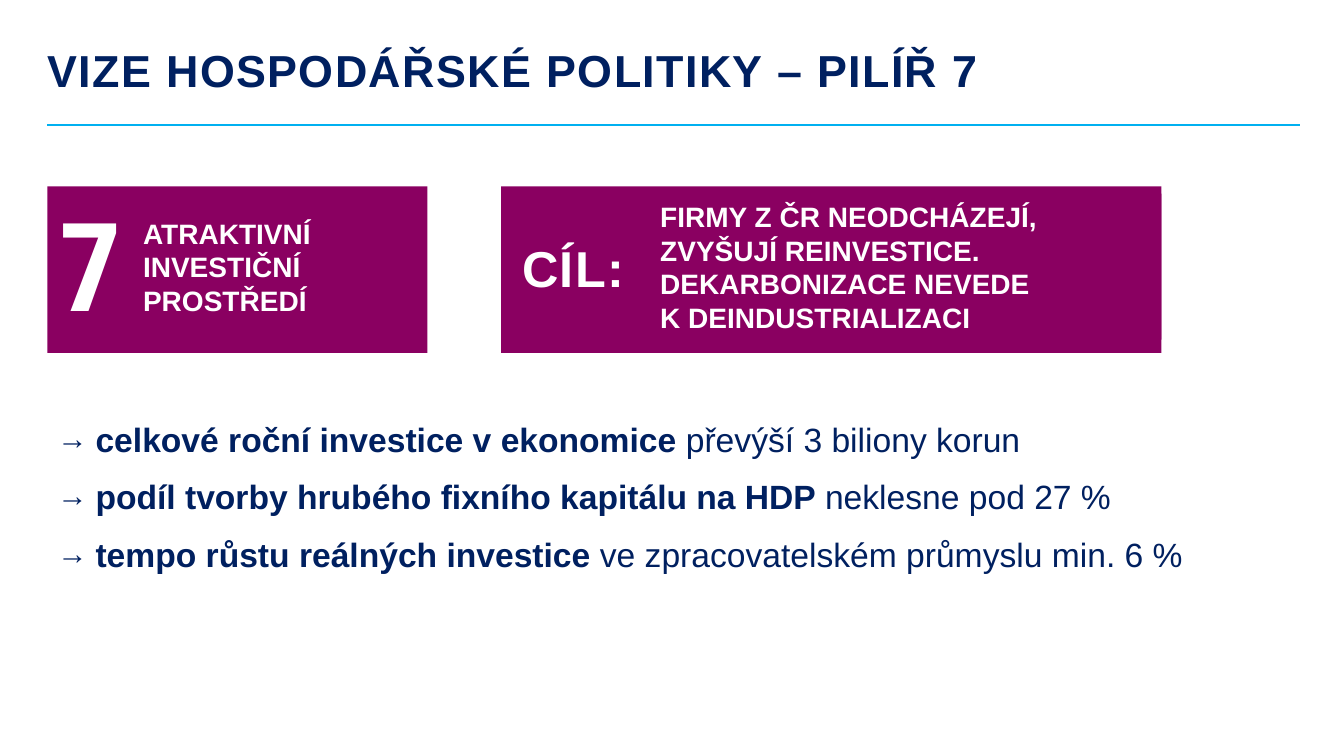
from dataclasses import dataclass
from typing import NamedTuple

from lxml.etree import SubElement
from pptx import Presentation
from pptx.dml.color import RGBColor
from pptx.enum.shapes import MSO_CONNECTOR, MSO_SHAPE
from pptx.enum.text import MSO_ANCHOR, PP_ALIGN
from pptx.oxml.ns import qn
from pptx.util import Pt

PX = 9144  # 100 px to the inch


@dataclass(frozen=True)
class Theme:
    navy: RGBColor = RGBColor(0x00, 0x20, 0x60)
    sky: RGBColor = RGBColor(0x00, 0xB0, 0xF0)
    plum: RGBColor = RGBColor(0x8A, 0x00, 0x61)
    white: RGBColor = RGBColor(0xFF, 0xFF, 0xFF)
    body_font: str = "Arial"
    number_font: str = "Roboto Condensed"
    title_size: int = 32
    number_size: int = 88
    goal_size: int = 36
    caption_size: int = 20
    bullet_size: int = 24


THEME = Theme()


class Box(NamedTuple):
    left: int
    top: int
    width: int
    height: int

    def inner(self, dx, dy, width, height):
        return Box(self.left + dx, self.top + dy, width, height)

    def emu(self):
        return [length * PX for length in self]


def style(font, size, color, bold=None, name=THEME.body_font):
    font.size, font.bold, font.name = Pt(size), bold, name
    font.color.rgb = color


def add_plate(shapes, box):
    plate = shapes.add_shape(MSO_SHAPE.RECTANGLE, *box.emu())
    plate.shadow.inherit = False
    plate.fill.solid()
    plate.fill.fore_color.rgb = THEME.plum
    plate.line.fill.background()
    return plate


def write_heading(frame, text, size, color, name=THEME.body_font):
    """Tight, letter-spaced bold line, flush with the left edge."""
    frame.word_wrap = True
    frame.vertical_anchor = MSO_ANCHOR.MIDDLE
    frame.margin_left = 0
    heading = frame.paragraphs[0]
    heading.alignment = PP_ALIGN.LEFT
    heading.line_spacing = 0.9
    run = heading.add_run()
    run.text = text
    run._r.get_or_add_rPr().set("spc", "100")
    style(heading.font, size, color, True, name)


def add_title(slide, box, text):
    title = slide.shapes.add_textbox(*box.inner(0, 0, 1009, 48).emu())
    write_heading(title.text_frame, text, THEME.title_size, THEME.navy)
    left, right, y = box.left * PX, (box.left + box.width) * PX, (box.top + box.height) * PX
    rule = slide.shapes.add_connector(MSO_CONNECTOR.STRAIGHT, left, y, right, y)
    rule.line.color.rgb = THEME.sky
    rule.line.width = Pt(1)
    SubElement(rule._element.spPr, qn("a:effectLst"))


def add_card(slide, box, mark, mark_box, mark_size, mark_font, caption, caption_box):
    """Plum panel with a large mark on the left and a caption beside it."""
    shapes = slide.shapes.add_group_shape().shapes
    add_plate(shapes, box)
    mark_plate = add_plate(shapes, box.inner(*mark_box))
    write_heading(mark_plate.text_frame, mark, mark_size, THEME.white, mark_font)

    frame = add_plate(shapes, box.inner(*caption_box)).text_frame
    frame.word_wrap = True
    frame.vertical_anchor = MSO_ANCHOR.MIDDLE
    paragraph = frame.paragraphs[0]
    paragraph.text = caption
    paragraph.alignment = PP_ALIGN.LEFT
    style(paragraph.font, THEME.caption_size, THEME.white, True)


def add_arrow_bullet(paragraph):
    properties = paragraph._p.get_or_add_pPr()
    indent = 38 * PX
    properties.set("marL", str(indent))
    properties.set("indent", str(-indent))
    color = SubElement(properties, qn("a:buClr"))
    SubElement(color, qn("a:srgbClr"), val=str(THEME.navy))
    SubElement(properties, qn("a:buSzPct"), val="90000")
    SubElement(properties, qn("a:buFont"), typeface=THEME.body_font)
    SubElement(properties, qn("a:buChar"), char="→")


def add_targets(slide, box, targets):
    frame = slide.shapes.add_textbox(*box.emu()).text_frame
    frame.word_wrap = True
    for index, (measure, target) in enumerate(targets):
        paragraph = frame.add_paragraph() if index else frame.paragraphs[0]
        paragraph.space_after = Pt(12)
        add_arrow_bullet(paragraph)
        style(paragraph.font, THEME.bullet_size, THEME.navy)
        for text, bold in ((measure + " ", True), (target, False)):
            run = paragraph.add_run()
            run.text = text
            run.font.bold = bold


def main():
    deck = Presentation()
    deck.slide_width, deck.slide_height = 1333 * PX, 750 * PX
    slide = deck.slides.add_slide(deck.slide_layouts[6])

    add_title(slide, Box(47, 48, 1242, 76), "VIZE HOSPODÁŘSKÉ POLITIKY – PILÍŘ 7")
    add_card(
        slide, Box(47, 185, 377, 165),
        "7", (12, 19, 73, 130), THEME.number_size, THEME.number_font,
        "ATRAKTIVNÍ \vINVESTIČNÍ \vPROSTŘEDÍ", (85, 24, 275, 111),
    )
    add_targets(slide, Box(47, 411, 1143, 165), [
        ("celkové roční investice v ekonomice", "převýší 3 biliony korun"),
        ("podíl tvorby hrubého fixního kapitálu na HDP", "neklesne pod 27 %"),
        ("tempo růstu reálných investice", "ve zpracovatelském průmyslu min. 6 %"),
    ])
    add_card(
        slide, Box(497, 185, 655, 165),
        "CÍL:", (21, 19, 127, 130), THEME.goal_size, THEME.body_font,
        "FIRMY Z ČR NEODCHÁZEJÍ, ZVYŠUJÍ REINVESTICE. DEKARBONIZACE NEVEDE \v"
        "K DEINDUSTRIALIZACI", (148, 7, 507, 145),
    )
    deck.save("out.pptx")


if __name__ == "__main__":
    main()
